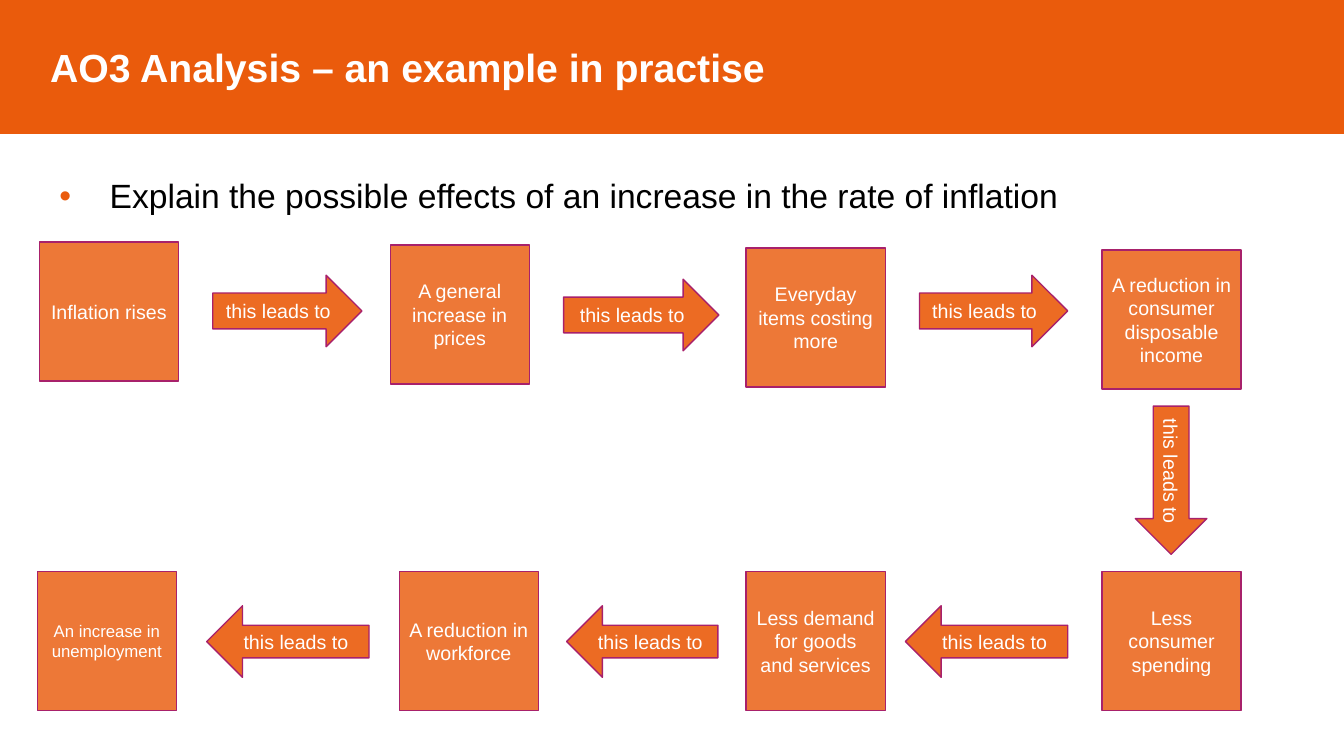
import pptx
import pptx.util
import pptx.dml.color
import pptx.enum.shapes
import pptx.enum.text
import pptx.oxml.ns
import lxml.etree

EMU_PER_PX = 9144  # 100 px to the inch
COLOURS = {"orange": "EA5B0C", "plum": "A8216B", "white": "FFFFFF", "black": "000000"}
SHAPES = pptx.enum.shapes.MSO_SHAPE
ALIGN = pptx.enum.text.PP_ALIGN
ANCHOR = pptx.enum.text.MSO_ANCHOR

CARD_SIDE = 138
ARROW_HEIGHT = 71
LINK_TEXT = "this leads to"

# Cards: left, top, text, text size
CARDS = [
    (39, 240, "Inflation rises", 14),
    (387, 243, "A general increase in prices", 14),
    (740, 246, "Everyday items costing more", 14),
    (1093, 248, "A reduction in consumer disposable income", 14),
    (1093, 567, "Less consumer spending", 14),
    (740, 567, "Less demand for goods and services", 14),
    (396, 567, "A reduction in workforce", 14),
    (37, 567, "An increase in unemployment", 12),
]
# Arrows: left, top, width, direction
ARROWS = [
    (211, 273, 148, "right"),
    (559, 277, 154, "right"),
    (912, 273, 147, "right"),
    (1088, 441, 147, "down"),
    (898, 601, 161, "left"),
    (562, 601, 150, "left"),
    (205, 601, 161, "left"),
]


def px(length):
    return pptx.util.Emu(length * EMU_PER_PX)


def rgb(name):
    return pptx.dml.color.RGBColor.from_string(COLOURS[name])


def add_child(parent, tag, **attributes):
    return lxml.etree.SubElement(parent, pptx.oxml.ns.qn(tag), attributes)


def write(shape, text, size, colour, align=ALIGN.LEFT, bold=False):
    """Put one paragraph of text in the shape and return the paragraph."""
    shape.text_frame.word_wrap = True
    para = shape.text_frame.paragraphs[0]
    para.alignment = align
    span = para.add_run()
    span.text = text
    span.font.name = "Arial"
    span.font.size = pptx.util.Pt(size)
    span.font.bold = bold
    span.font.color.rgb = rgb(colour)
    return para


def indent(para, margin, first_line=0):
    properties = para._p.get_or_add_pPr()
    properties.set("marL", str(px(margin)))
    properties.set("indent", str(px(first_line)))
    return properties


def add_block(page, preset, box, line, opacity=100):
    """Add an orange preset shape with a thin outline."""
    block = page.shapes.add_shape(preset, *map(px, box))
    block.shadow.inherit = False
    block.fill.solid()
    block.fill.fore_color.rgb = rgb("orange")
    if opacity < 100:
        colour = block.fill._xPr.find(".//" + pptx.oxml.ns.qn("a:srgbClr"))
        add_child(colour, "a:alpha", val=str(opacity * 1000))
    block.line.color.rgb = rgb(line)
    block.line.width = pptx.util.Pt(1)
    block.text_frame.vertical_anchor = ANCHOR.MIDDLE
    return block


def add_title_band(page, box):
    band = add_block(page, SHAPES.RECTANGLE, box, "orange")
    para = write(band, "AO3 Analysis – an example in practise", 28, "white", bold=True)
    indent(para, 40)


def add_question(page, box):
    question = page.shapes.add_textbox(*map(px, box))
    para = write(question, "Explain the possible effects of an increase in the rate of inflation",
                 24, "black")
    para.space_after = pptx.util.Pt(12)
    properties = indent(para, 50, -50)
    bullet_colour = add_child(properties, "a:buClr")
    add_child(bullet_colour, "a:srgbClr", val=COLOURS["orange"])
    add_child(properties, "a:buFont", typeface="Arial")
    add_child(properties, "a:buChar", char="•")


def add_card(page, box, text, size):
    card = add_block(page, SHAPES.RECTANGLE, box, "plum", 82)
    write(card, text, size, "white", ALIGN.CENTER)


def add_arrow(page, box, direction):
    preset = SHAPES.LEFT_ARROW if direction == "left" else SHAPES.RIGHT_ARROW
    arrow = add_block(page, preset, box, "plum", 90)
    if direction == "left":
        arrow.adjustments[0] = 0.455
    elif direction == "down":
        arrow.rotation = 90
    write(arrow, LINK_TEXT, 14, "white", ALIGN.CENTER)


def add_chain(page):
    """Draw the chain of effects: cards joined by arrows."""
    for left, top, text, size in CARDS:
        add_card(page, (left, top, CARD_SIDE, CARD_SIDE), text, size)
    for left, top, width, direction in ARROWS:
        add_arrow(page, (left, top, width, ARROW_HEIGHT), direction)


def main():
    deck = pptx.Presentation()
    deck.slide_width, deck.slide_height = px(1333), px(750)
    page = deck.slides.add_slide(deck.slide_layouts[6])
    add_title_band(page, (0, 0, 1333, 132))
    add_question(page, (49, 169, 1260, 108))
    add_chain(page)
    deck.save("out.pptx")


if __name__ == "__main__":
    main()
